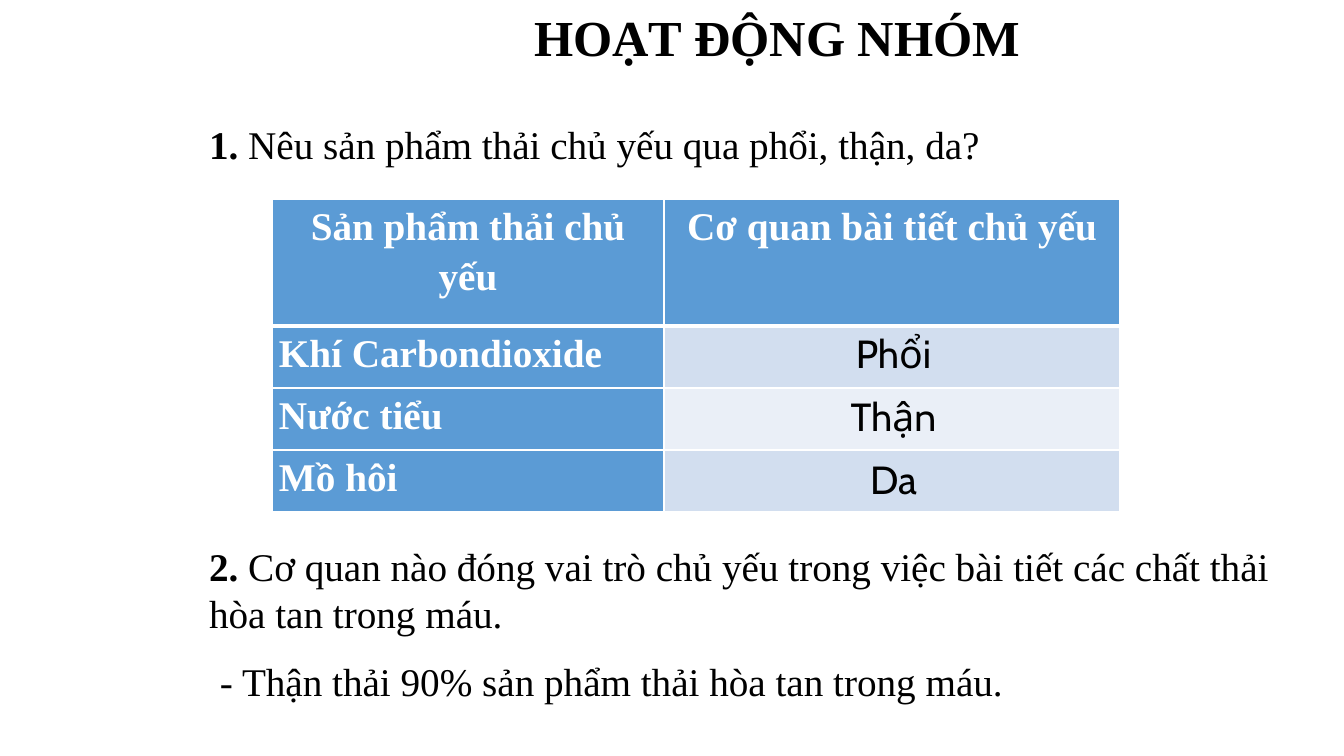
from lxml.etree import SubElement
from pptx import Presentation
from pptx.dml.color import RGBColor
from pptx.enum.text import MSO_ANCHOR, MSO_AUTO_SIZE, PP_ALIGN
from pptx.oxml import parse_xml
from pptx.oxml.ns import qn
from pptx.util import Emu, Pt

THEME = {
    "serif": "Times New Roman", "sans": "Cabin",
    "title": 36, "body": 28,
    "black": "000000", "white": "FFFFFF", "blue": "5B9BD5",
    "bands": ["D2DEEF", "EAEFF7"],
}
NS = "http://schemas.openxmlformats.org/drawingml/2006/main"


def px(n):
    return Emu(round(n * 914400 / 100.8))


def write(p, text, size="body", font="serif", color="black", bold=False):
    r = p.add_run()
    r.text = text
    style = {"name": THEME[font], "size": Pt(THEME[size]), "bold": bold}
    for key, value in style.items():
        setattr(r.font, key, value)
    r.font.color.rgb = RGBColor.from_string(THEME[color])


prs = Presentation()
prs.slide_width, prs.slide_height = px(1344), px(756)
s = prs.slides.add_slide(prs.slide_layouts[1])
title, body = s.placeholders

# Title and body frames
frames = [(title, (524, 1, 530, 72), MSO_ANCHOR.TOP),
          (body, (199, 112, 1145, 532), MSO_ANCHOR.MIDDLE)]
for sp, box, anchor in frames:
    sp.left, sp.top, sp.width, sp.height = map(px, box)
    fmt = {"word_wrap": True, "auto_size": MSO_AUTO_SIZE.NONE, "vertical_anchor": anchor}
    for key, value in fmt.items():
        setattr(sp.text_frame, key, value)

p = title.text_frame.paragraphs[0]
p.alignment = PP_ALIGN.LEFT
write(p, "HOẠT ĐỘNG NHÓM", size="title", bold=True)

# Questions, with room for the table between them
questions = [
    ("1. ", "Nêu sản phẩm thải chủ yếu qua phổi, thận, da?", 0),
    ("2. ", "Cơ quan nào đóng vai trò chủ yếu trong việc bài tiết các chất thải "
            "hòa tan trong máu.", 268),
]
tf = body.text_frame
for i, (number, question, gap) in enumerate(questions):
    p = tf.add_paragraph() if i else tf.paragraphs[0]
    p.space_before, p.line_spacing = Pt(gap), 1.0
    pPr = p._p.get_or_add_pPr()
    pPr.set("marL", "0")
    pPr.set("indent", "0")
    SubElement(pPr, qn("a:buNone"))
    write(p, number, bold=True)
    write(p, question)

# Table of waste products
rows = [
    ("Sản phẩm thải chủ yếu", "Cơ quan bài tiết chủ yếu"),
    ("Khí Carbondioxide", ""),
    ("Nước tiểu", ""),
    ("Mồ hôi", ""),
]
table = s.shapes.add_table(4, 2, px(272), px(199), px(848), px(313)).table
for column, width in zip(table.columns, (392, 456)):
    column.width = px(width)
for i, texts in enumerate(rows):
    table.rows[i].height = px(62 if i else 127)
    for j, text in enumerate(texts):
        cell = table.cell(i, j)
        cell.margin_left = cell.margin_right = px(7)
        cell.margin_top = cell.margin_bottom = 0
        cell.fill.solid()
        fill = THEME["bands"][(i - 1) % 2] if i and j else THEME["blue"]
        cell.fill.fore_color.rgb = RGBColor.from_string(fill)
        if text:
            p = cell.text_frame.paragraphs[0]
            p.alignment = PP_ALIGN.JUSTIFY if i else PP_ALIGN.CENTER
            p.line_spacing = 1.15
            write(p, text, color="white", bold=True)
        # White borders, thick under the header
        for k, side in enumerate("LRTB"):
            thick = (i, side) in ((0, "B"), (1, "T"))
            cell._tc.get_or_add_tcPr().insert(k, parse_xml(
                f'<a:ln{side} xmlns:a="{NS}" w="{Pt(3 if thick else 1)}"><a:solidFill>'
                f'<a:srgbClr val="{THEME["white"]}"/></a:solidFill></a:ln{side}>'))

# Answers: three over the table, one at the bottom
answers = [(text, (769, 327 + 63 * i, 249, 51), "sans", PP_ALIGN.CENTER, MSO_ANCHOR.MIDDLE)
           for i, text in enumerate(["Phổi", "Thận", "Da"])]
answers.append(("- Thận thải 90% sản phẩm thải hòa tan trong máu.",
                (210, 652, 1023, 57), "serif", PP_ALIGN.LEFT, MSO_ANCHOR.TOP))
for text, box, font, align, anchor in answers:
    tf = s.shapes.add_textbox(*map(px, box)).text_frame
    tf.word_wrap, tf.vertical_anchor = True, anchor
    p = tf.paragraphs[0]
    p.alignment = align
    write(p, text, font=font)

prs.save("out.pptx")
